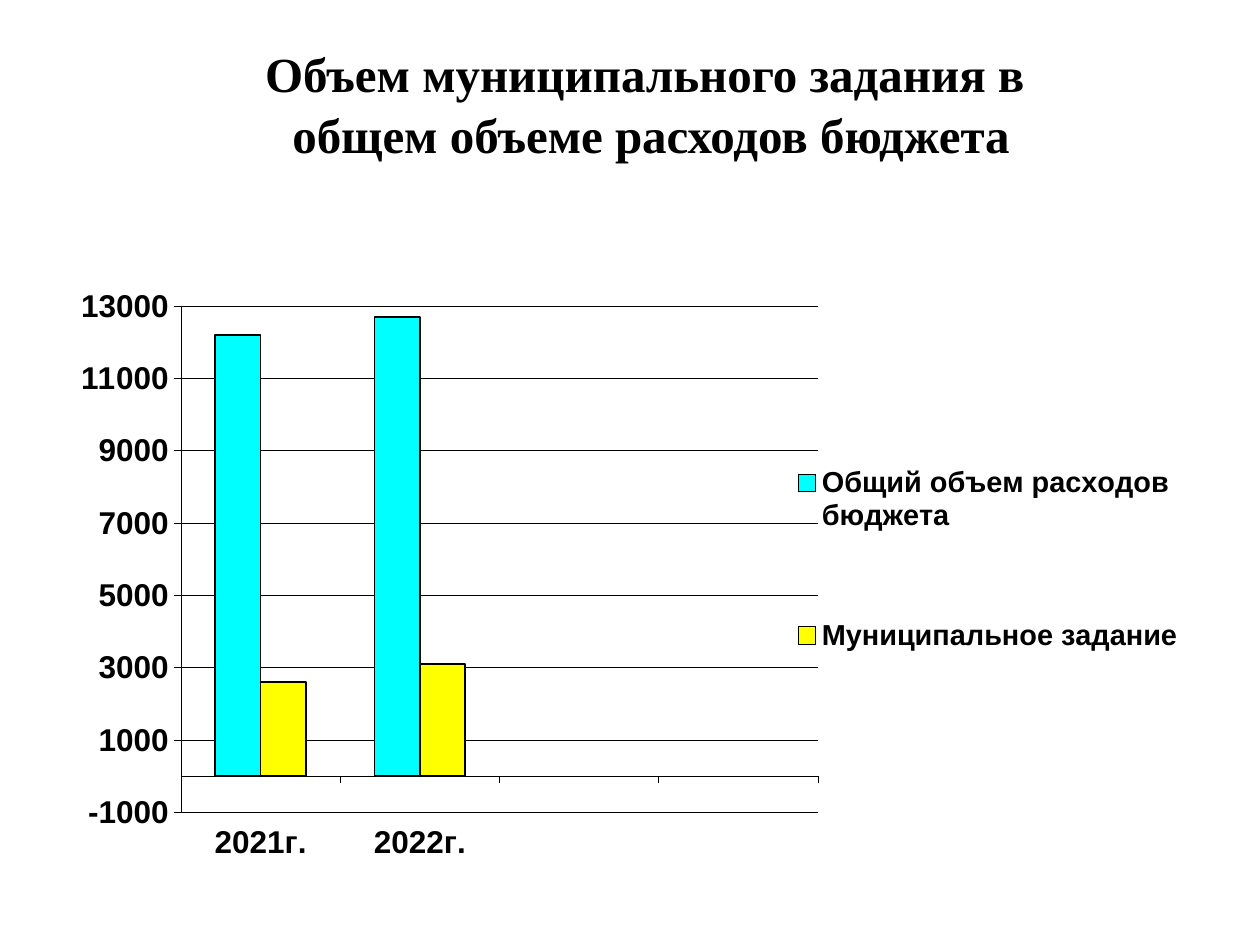
from lxml import etree
from pptx import Presentation
from pptx.chart.data import CategoryChartData
from pptx.dml.color import RGBColor
from pptx.enum.chart import XL_CHART_TYPE, XL_LEGEND_POSITION, XL_TICK_LABEL_POSITION, XL_TICK_MARK
from pptx.enum.text import MSO_ANCHOR, PP_ALIGN
from pptx.oxml.ns import qn
from pptx.util import Pt

CLUSTERED = XL_CHART_TYPE.COLUMN_CLUSTERED
LEGEND_RIGHT = XL_LEGEND_POSITION.RIGHT
LABELS_LOW = XL_TICK_LABEL_POSITION.LOW
TICK_OUTSIDE = XL_TICK_MARK.OUTSIDE
CENTER = PP_ALIGN.CENTER
TOP = MSO_ANCHOR.TOP

BLACK = RGBColor(0, 0, 0)
CYAN = RGBColor(0, 255, 255)
YELLOW = RGBColor(255, 255, 0)


def style_font(font, name, size):
    font.name = name
    font.size = Pt(size)
    font.bold = True
    font.color.rgb = BLACK


def set_layout(layout, x, y, width, height, inner=False):
    """Place a chart part by fractions of the chart area."""
    for child in list(layout):
        layout.remove(child)
    manual = etree.SubElement(layout, qn("c:manualLayout"))
    settings = [("layoutTarget", "inner")] if inner else []
    settings += [("xMode", "edge"), ("yMode", "edge"),
                 ("x", x), ("y", y), ("w", width), ("h", height)]
    for tag, value in settings:
        etree.SubElement(manual, qn("c:" + tag)).set("val", str(value))


presentation = Presentation()
presentation.slide_width = Pt(720)
presentation.slide_height = Pt(540)
slide = presentation.slides.add_slide(presentation.slide_layouts[6])

# Title
title = slide.shapes.add_textbox(Pt(48), Pt(18), Pt(648), Pt(90))
frame = title.text_frame
frame.word_wrap = True
frame.vertical_anchor = TOP
frame.margin_top = Pt(5)
frame.text = "Объем муниципального задания в \nобщем объеме расходов бюджета"
for paragraph in frame.paragraphs:
    paragraph.alignment = CENTER
    paragraph.line_spacing = 1.05
    style_font(paragraph.font, "Times New Roman", 28)

# Chart data, with two unused categories on the right
data = CategoryChartData()
data.categories = ["2021г.", "2022г.", "", ""]
data.add_series("Общий объем расходов бюджета", [12200, 12700, None, None])
data.add_series("Муниципальное задание", [2600, 3100, None, None])
chart = slide.shapes.add_chart(
    CLUSTERED, Pt(46), Pt(157.5), Pt(638.5), Pt(348.5), data).chart
chart.has_title = False
style_font(chart.font, "Arial", 18)

# Columns
plot = chart.plots[0]
plot.vary_by_categories = False
plot.gap_width = 150
plot.overlap = 0
for series, color in zip(plot.series, (CYAN, YELLOW)):
    series.format.fill.solid()
    series.format.fill.fore_color.rgb = color
    series.format.line.color.rgb = BLACK
    series.format.line.width = Pt(1)

# Axes and gridlines
category_axis, value_axis = chart.category_axis, chart.value_axis
value_axis.minimum_scale = -1000
value_axis.maximum_scale = 13000
value_axis.major_unit = 2000
value_axis.has_major_gridlines = True
category_axis.tick_label_position = LABELS_LOW
for axis in (category_axis, value_axis):
    axis.major_tick_mark = TICK_OUTSIDE
    style_font(axis.tick_labels.font, "Arial", 18)
for part in (category_axis, value_axis, value_axis.major_gridlines):
    part.format.line.color.rgb = BLACK
    part.format.line.width = Pt(0.25)

# Legend
chart.has_legend = True
legend = chart.legend
legend.position = LEGEND_RIGHT
legend.include_in_layout = False
style_font(legend.font, "Arial", 16.5)

# Placement of plot area and legend
plot_area = chart._chartSpace.chart.plotArea
plot_layout = plot_area.find(qn("c:layout"))
if plot_layout is None:
    plot_layout = etree.Element(qn("c:layout"))
    plot_area.insert(0, plot_layout)
set_layout(plot_layout, 0.09, 0.05, 0.57, 0.83, inner=True)
legend_layout = legend._element.find(qn("c:layout"))
if legend_layout is None:
    legend_layout = etree.Element(qn("c:layout"))
    legend._element.find(qn("c:legendPos")).addnext(legend_layout)
set_layout(legend_layout, 0.65, 0.17, 0.34, 0.59)

presentation.save("out.pptx")
